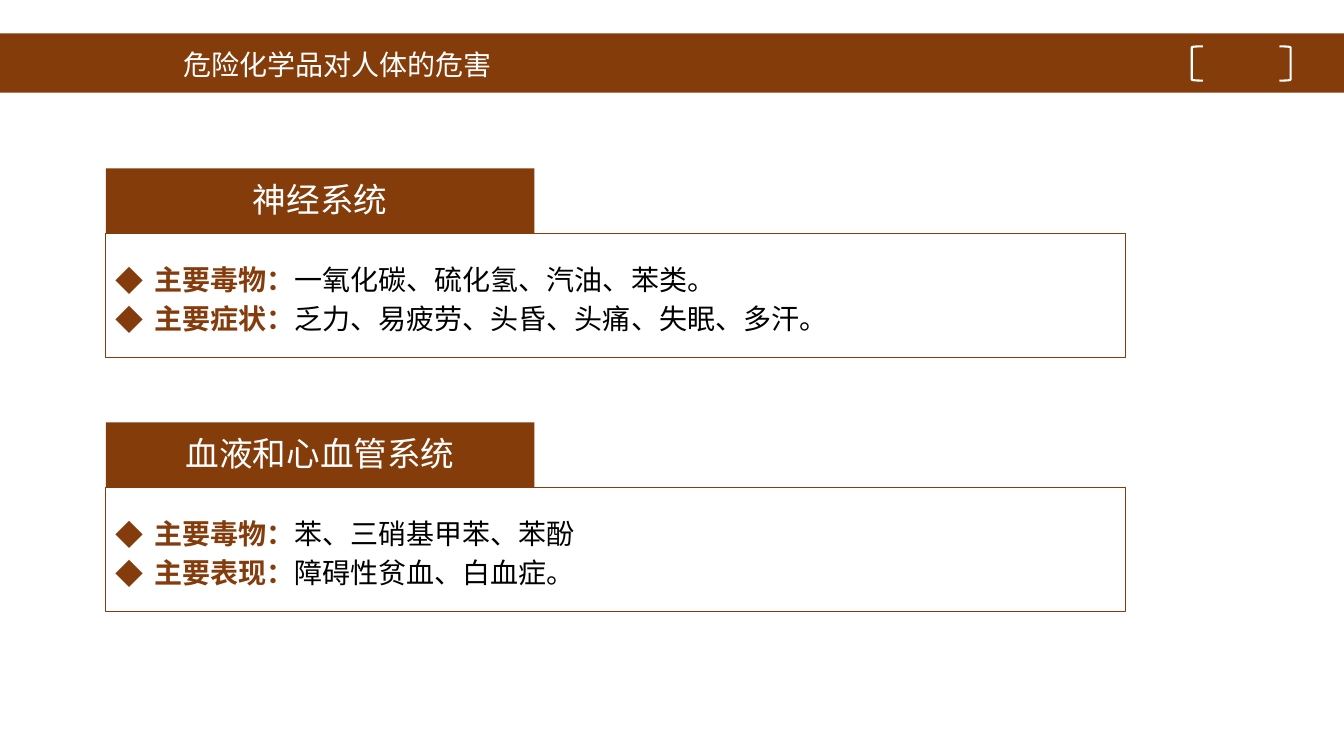
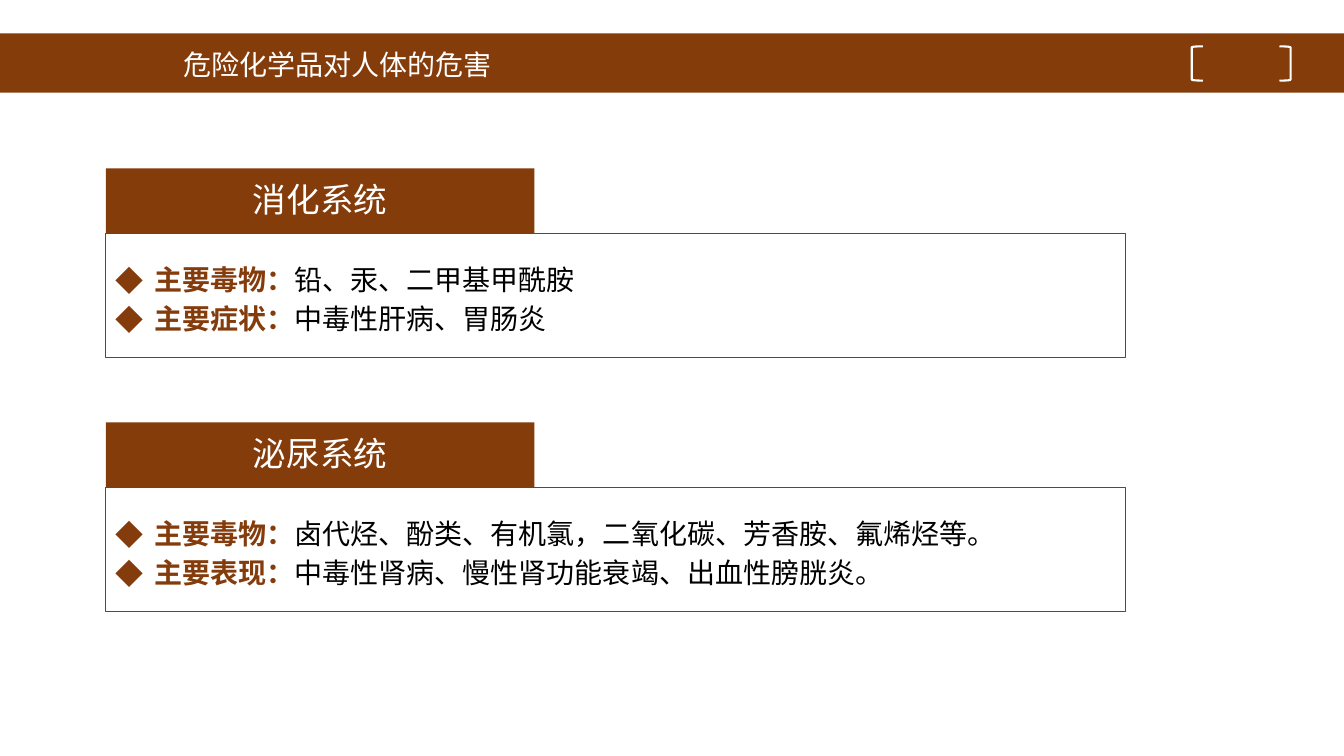
from lxml import etree
from pptx import Presentation
from pptx import util as u
from pptx.dml.color import RGBColor
from pptx.enum import shapes, text
from pptx.oxml import ns

TITLE = "危险化学品对人体的危害"
SLIDES = [
    [
        ("神经系统", [
            ("主要毒物：", "一氧化碳、硫化氢、汽油、苯类。"),
            ("主要症状：", "乏力、易疲劳、头昏、头痛、失眠、多汗。"),
        ]),
        ("血液和心血管系统", [
            ("主要毒物：", "苯、三硝基甲苯、苯酚"),
            ("主要表现：", "障碍性贫血、白血症。"),
        ]),
    ],
    [
        ("消化系统", [
            ("主要毒物：", "铅、汞、二甲基甲酰胺"),
            ("主要症状：", "中毒性肝病、胃肠炎"),
        ]),
        ("泌尿系统", [
            ("主要毒物：", "卤代烃、酚类、有机氯，二氧化碳、芳香胺、氟烯烃等。"),
            ("主要表现：", "中毒性肾病、慢性肾功能衰竭、出血性膀胱炎。"),
        ]),
    ],
]


def color(value):
    return RGBColor.from_string(value)


class Deck:
    # Shared style
    BAND, ACCENT = "843C0B", "843C0C"
    WHITE, BLACK = "FFFFFF", "000000"
    TITLE_FONT, BODY_FONT = "Arial Narrow", "Noto Sans CJK SC"
    PANEL_LEFT, PANEL_TOP, PANEL_STEP = 1.05, 1.67, 2.52
    HEADER_HEIGHT = 0.65

    def __init__(self):
        self.presentation = Presentation()
        self.presentation.slide_width = u.Inches(13.33)
        self.presentation.slide_height = u.Inches(7.5)
        self.slide = None

    def shape(self, kind, left, top, width, height,
              fill=None, line=None, line_width=0.75):
        shape = self.slide.shapes.add_shape(
            kind, *map(u.Inches, (left, top, width, height)))
        shape.shadow.inherit = False
        if fill:
            shape.fill.solid()
            shape.fill.fore_color.rgb = color(fill)
        else:
            shape.fill.background()
        if line:
            shape.line.color.rgb = color(line)
            shape.line.width = u.Pt(line_width)
        else:
            shape.line.fill.background()
        return shape

    def rectangle(self, *box, **style):
        return self.shape(shapes.MSO_SHAPE.RECTANGLE, *box, **style)

    def run(self, paragraph, words, size, ink, bold=False, font=BODY_FONT):
        run = paragraph.add_run()
        run.text = words
        run.font.size = u.Pt(size)
        run.font.bold = bold
        run.font.name = font
        run.font.color.rgb = color(ink)
        # East Asian typeface follows the Latin one
        latin = run.font._element.find(ns.qn("a:latin"))
        east_asian = etree.Element(ns.qn("a:ea"), typeface=font)
        latin.addnext(east_asian)

    def frame(self, shape):
        frame = shape.text_frame
        frame.word_wrap = True
        frame.vertical_anchor = text.MSO_ANCHOR.MIDDLE
        return frame

    def bullet(self, paragraph):
        properties = paragraph._p.get_or_add_pPr()
        indent = u.Inches(0.38)
        properties.set("marL", str(indent))
        properties.set("indent", str(-indent))
        bullet_color = etree.SubElement(properties, ns.qn("a:buClr"))
        etree.SubElement(bullet_color, ns.qn("a:srgbClr"), val=self.ACCENT)
        etree.SubElement(properties, ns.qn("a:buFont"), typeface=self.BODY_FONT)
        etree.SubElement(properties, ns.qn("a:buChar"), char="◆")

    # Title band with a pair of brackets on the right
    def title_band(self, title):
        self.rectangle(0, 0.33, 13.33, 0.59, fill=self.BAND)
        for left, rotation in ((11.82, 0), (12.69, 180)):
            bracket = self.shape(shapes.MSO_SHAPE.LEFT_BRACKET, left, 0.46,
                                 0.11, 0.34, line=self.WHITE, line_width=1.5)
            bracket.rotation = rotation
        box = self.slide.shapes.add_textbox(
            *map(u.Inches, (1.72, 0.43, 3.73, 0.45)))
        paragraph = self.frame(box).paragraphs[0]
        paragraph.line_spacing = 0.9
        self.run(paragraph, title, 20, self.WHITE, font=self.TITLE_FONT)

    # Outlined box of labelled points under a filled header
    def panel(self, index, heading, points):
        top = self.PANEL_TOP + index * self.PANEL_STEP
        body = self.rectangle(self.PANEL_LEFT, top + self.HEADER_HEIGHT,
                              10.11, 1.23, line=self.ACCENT)
        frame = self.frame(body)
        for number, (label, detail) in enumerate(points):
            paragraph = frame.add_paragraph() if number else frame.paragraphs[0]
            paragraph.alignment = text.PP_ALIGN.LEFT
            paragraph.line_spacing = u.Pt(28)
            self.bullet(paragraph)
            self.run(paragraph, label, 20, self.ACCENT, bold=True)
            self.run(paragraph, detail, 20, self.BLACK)

        header = self.rectangle(self.PANEL_LEFT, top, 4.25,
                                self.HEADER_HEIGHT, fill=self.BAND)
        paragraph = self.frame(header).paragraphs[0]
        paragraph.alignment = text.PP_ALIGN.CENTER
        paragraph.line_spacing = 0.9
        self.run(paragraph, heading, 24, self.WHITE)

    def add_slide(self, title, panels):
        blank = self.presentation.slide_layouts[6]
        self.slide = self.presentation.slides.add_slide(blank)
        self.title_band(title)
        for index, (heading, points) in enumerate(panels):
            self.panel(index, heading, points)


def main():
    deck = Deck()
    for panels in SLIDES:
        deck.add_slide(TITLE, panels)
    deck.presentation.save("out.pptx")


if __name__ == "__main__":
    main()
